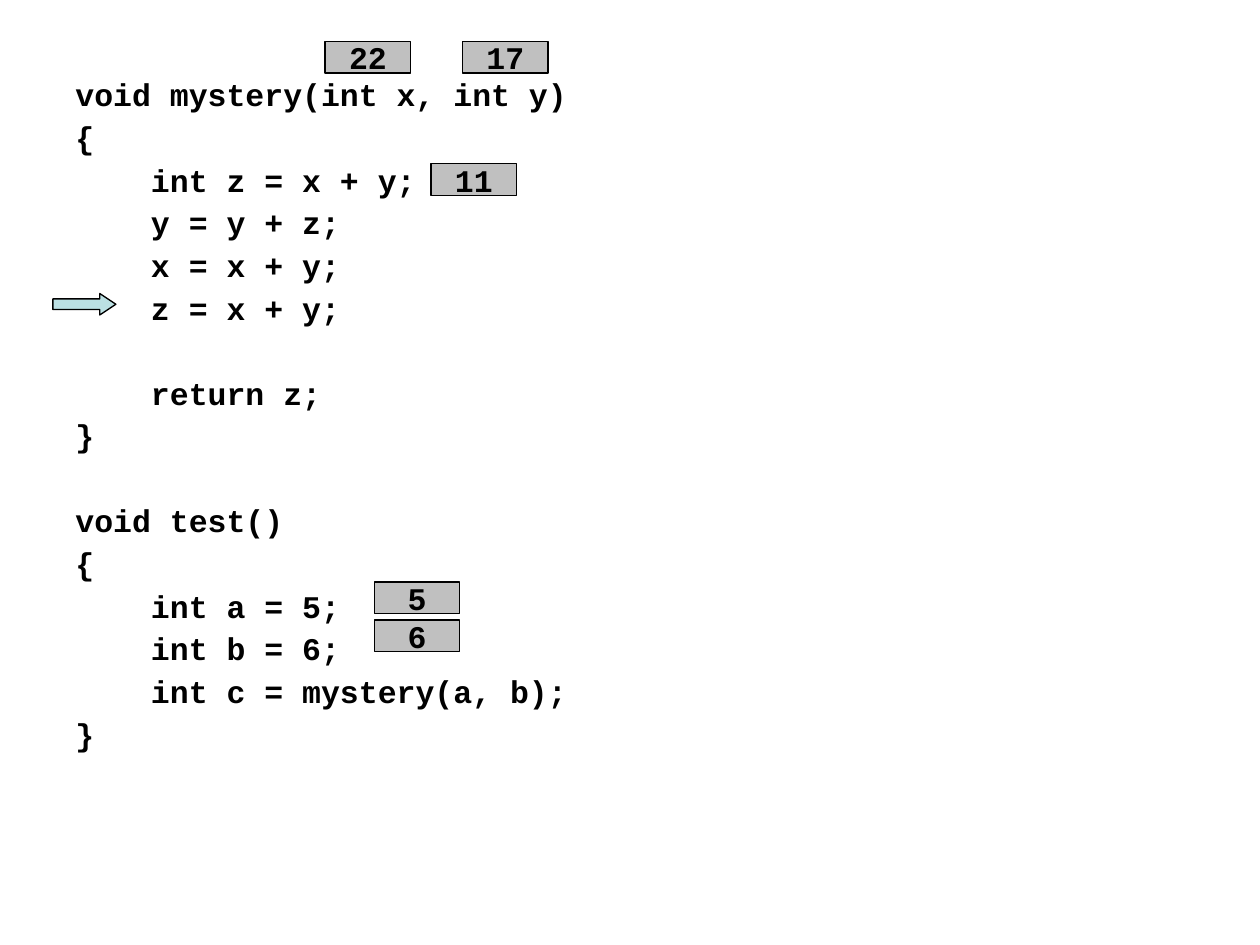
from dataclasses import dataclass

from pptx import Presentation, util as u
from pptx.dml.color import RGBColor
from pptx.enum import shapes, text

# (indent level, code, follows a one-line gap)
CODE = [
    (0, "void mystery(int x, int y)", False),
    (0, "{", False),
    (1, "int z = x + y;", False),
    (1, "y = y + z;", False),
    (1, "x = x + y;", False),
    (1, "z = x + y;", False),
    (1, "return z;", True),
    (0, "}", False),
    (0, "void test()", True),
    (0, "{", False),
    (1, "int a = 5;", False),
    (1, "int b = 6;", False),
    (1, "int c = mystery(a, b);", False),
    (0, "}", False),
]
# (value, left, top)
VALUES = [
    ("5", 2.97, 4.62),
    ("6", 2.97, 4.92),
    ("22", 2.58, 0.33),
    ("17", 3.67, 0.33),
    ("11", 3.42, 1.3),
]
VALUE_SIZE = (0.68, 0.25)
CODE_BOX = (0, 0.58, 10, 6.92)
ARROW_BOX = (0.42, 2.33, 0.5, 0.17)
CODE_MARGIN = 0.5
TAB = 0.6  # four characters
PARAGRAPH_GAP = 5
EMPTY_LINE = 24


@dataclass(frozen=True)
class Theme:
    font: str = "Courier New"
    size: float = 18
    line_width: float = 0.75
    ink: RGBColor = RGBColor(0, 0, 0)
    value_fill: RGBColor = RGBColor(0xC0, 0xC0, 0xC0)
    arrow_fill: RGBColor = RGBColor(0xBB, 0xE0, 0xE3)


THEME = Theme()


def write(paragraph, content, align=text.PP_ALIGN.LEFT, margin=0, before=0, spacing=1.0):
    """Fill a paragraph; margin is in inches, before in points."""
    paragraph.alignment = align
    paragraph.space_before = u.Pt(before)
    paragraph.line_spacing = spacing
    properties = paragraph._p.get_or_add_pPr()
    properties.set("marL", str(u.Inches(margin)))
    properties.set("indent", "0")
    run = paragraph.add_run()
    run.text = content
    run.font.name = THEME.font
    run.font.size = u.Pt(THEME.size)
    run.font.bold = True
    run.font.color.rgb = THEME.ink


def add_outlined(slide, kind, box, fill):
    shape = slide.shapes.add_shape(kind, *map(u.Inches, box))
    shape.shadow.inherit = False
    shape.fill.solid()
    shape.fill.fore_color.rgb = fill
    shape.line.color.rgb = THEME.ink
    shape.line.width = u.Pt(THEME.line_width)
    return shape


def add_code(slide):
    frame = slide.shapes.add_textbox(*map(u.Inches, CODE_BOX)).text_frame
    frame.word_wrap = True
    for index, (level, line, after_gap) in enumerate(CODE):
        paragraph = frame.add_paragraph() if index else frame.paragraphs[0]
        before = PARAGRAPH_GAP + (EMPTY_LINE if after_gap else 0)
        write(paragraph, line, margin=CODE_MARGIN + level * TAB, before=before, spacing=0.9)


def add_arrow(slide):
    arrow = add_outlined(slide, shapes.MSO_SHAPE.RIGHT_ARROW, ARROW_BOX, THEME.arrow_fill)
    arrow.adjustments[0] = 0.5
    arrow.adjustments[1] = 0.75


def add_value(slide, value, left, top):
    box = (left, top, *VALUE_SIZE)
    shape = add_outlined(slide, shapes.MSO_SHAPE.RECTANGLE, box, THEME.value_fill)
    frame = shape.text_frame
    frame.word_wrap = False
    frame.vertical_anchor = text.MSO_ANCHOR.MIDDLE
    write(frame.paragraphs[0], value, align=text.PP_ALIGN.CENTER)


def main():
    presentation = Presentation()
    presentation.slide_width = u.Inches(10)
    presentation.slide_height = u.Inches(7.5)
    slide = presentation.slides.add_slide(presentation.slide_layouts[6])
    add_code(slide)
    add_arrow(slide)
    for value, left, top in VALUES:
        add_value(slide, value, left, top)
    presentation.save("out.pptx")


if __name__ == "__main__":
    main()
